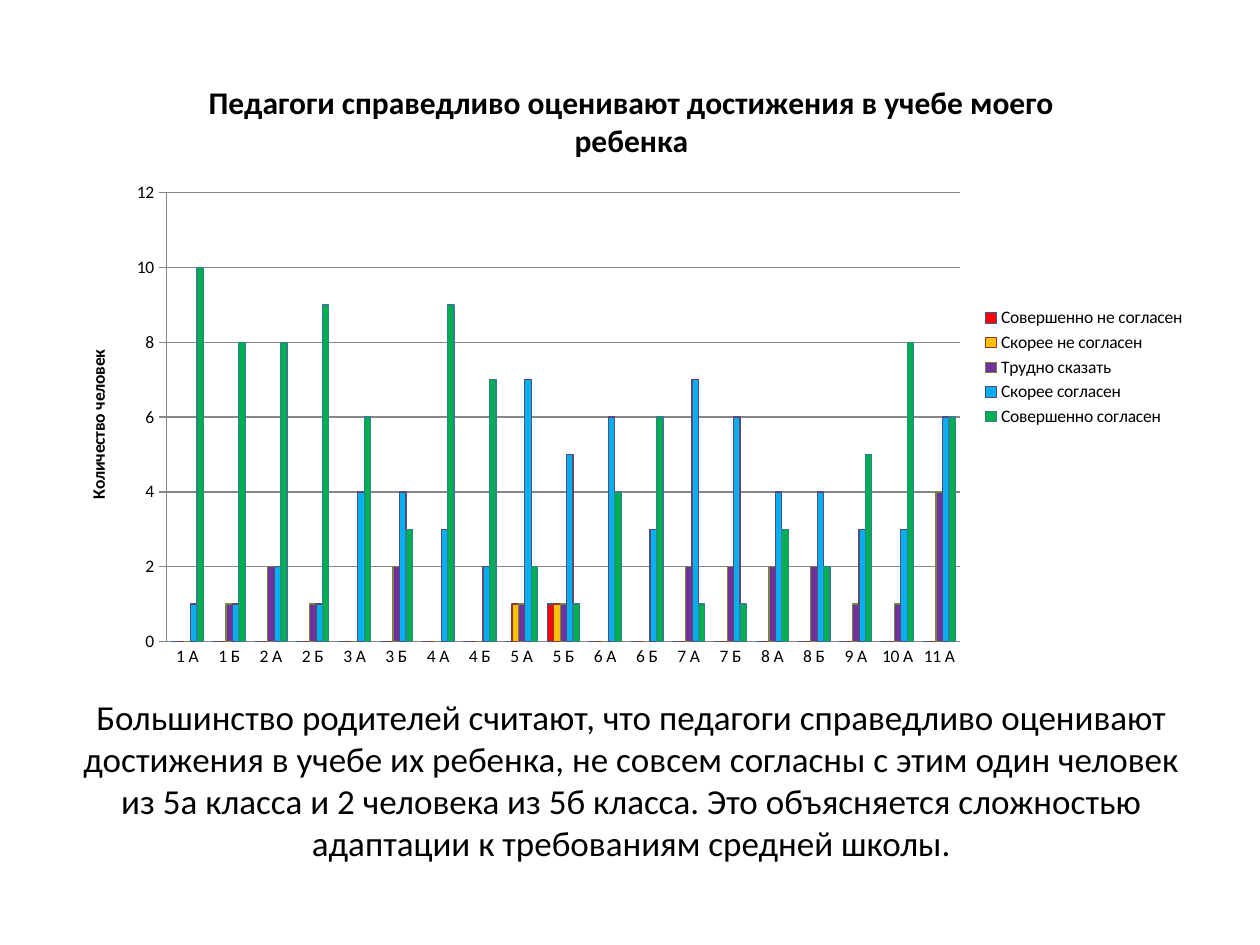
import dataclasses

import pptx
import pptx.chart.data
import pptx.dml.color
import pptx.enum.chart
import pptx.enum.text
import pptx.oxml
import pptx.oxml.ns
import pptx.util

Cm = pptx.util.Cm


@dataclasses.dataclass(frozen=True)
class Theme:
    font: str = "Calibri"
    text: str = "000000"
    grid: str = "868686"
    conclusion_size: int = 20
    title_size: int = 18
    chart_size: int = 10
    # Fill and outline of each answer
    bars: tuple = (
        ("FF0000", "385D8A"),
        ("FFC000", "8C3836"),
        ("7030A0", "71893F"),
        ("00B0F0", "5C4776"),
        ("00B050", "357D91"),
    )


CLASSES = ["1 А", "1 Б", "2 А", "2 Б", "3 А", "3 Б", "4 А", "4 Б", "5 А", "5 Б",
           "6 А", "6 Б", "7 А", "7 Б", "8 А", "8 Б", "9 А", "10 А", "11 А"]
ANSWERS = {
    "Совершенно не согласен": [0, 0, 0, 0, 0, 0, 0, 0, 0, 1, 0, 0, 0, 0, 0, 0, 0, 0, 0],
    "Скорее не согласен": [0, 0, 0, 0, 0, 0, 0, 0, 1, 1, 0, 0, 0, 0, 0, 0, 0, 0, 0],
    "Трудно сказать": [0, 1, 2, 1, 0, 2, 0, 0, 1, 1, 0, 0, 2, 2, 2, 2, 1, 1, 4],
    "Скорее согласен": [1, 1, 2, 1, 4, 4, 3, 2, 7, 5, 6, 3, 7, 6, 4, 4, 3, 3, 6],
    "Совершенно согласен": [10, 8, 8, 9, 6, 3, 9, 7, 2, 1, 4, 6, 1, 1, 3, 2, 5, 8, 6],
}
CHART_TITLE = "Педагоги справедливо оценивают достижения в учебе моего ребенка"
AXIS_TITLE = "Количество человек"
CONCLUSION = (
    "Большинство родителей считают, что педагоги справедливо оценивают достижения "
    "в учебе их ребенка, не совсем согласны с этим один человек из 5а класса и "
    "2 человека из 5б класса. Это объясняется сложностью адаптации к требованиям "
    "средней школы."
)


def apply(target, values):
    for name, value in values.items():
        setattr(target, name, value)


class SlideBuilder:
    def __init__(self, slide, theme):
        self.slide = slide
        self.theme = theme

    def color(self, value):
        return pptx.dml.color.RGBColor.from_string(value)

    def style_font(self, font, size, bold=False):
        apply(font, {"name": self.theme.font, "size": pptx.util.Pt(size), "bold": bold})
        font.color.rgb = self.color(self.theme.text)

    def style_line(self, line, color):
        line.color.rgb = self.color(color)
        line.width = pptx.util.Pt(0.75)

    def add_text(self, text, box, size):
        frame = self.slide.shapes.add_textbox(*box).text_frame
        apply(frame, {"word_wrap": True,
                      "vertical_anchor": pptx.enum.text.MSO_ANCHOR.MIDDLE})
        paragraph = frame.paragraphs[0]
        paragraph.alignment = pptx.enum.text.PP_ALIGN.CENTER
        run = paragraph.add_run()
        run.text = text
        self.style_font(run.font, size)

    def add_title(self, owner, text, size):
        """Give a chart or an axis its bold title."""
        frame = owner.text_frame
        frame.text = text
        self.style_font(frame.paragraphs[0].runs[0].font, size, bold=True)

    def add_column_chart(self, categories, answers, box, plot_area):
        data = pptx.chart.data.CategoryChartData(number_format="0")
        data.categories = categories
        for name, values in answers.items():
            data.add_series(name, values)
        chart = self.slide.shapes.add_chart(
            pptx.enum.chart.XL_CHART_TYPE.COLUMN_CLUSTERED, *box, data).chart
        self.style_font(chart.font, self.theme.chart_size)
        self.add_title(chart.chart_title, CHART_TITLE, self.theme.title_size)
        apply(chart, {"has_legend": True})
        apply(chart.legend, {"position": pptx.enum.chart.XL_LEGEND_POSITION.RIGHT,
                             "include_in_layout": False})

        # Columns
        plot = chart.plots[0]
        apply(plot, {"gap_width": 150, "overlap": 0, "vary_by_categories": False})
        for series, (fill, outline) in zip(plot.series, self.theme.bars):
            series.format.fill.solid()
            series.format.fill.fore_color.rgb = self.color(fill)
            self.style_line(series.format.line, outline)

        # Axes
        tick = pptx.enum.chart.XL_TICK_MARK
        apply(chart.category_axis, {"major_tick_mark": tick.NONE})
        apply(chart.value_axis, {"major_tick_mark": tick.OUTSIDE,
                                 "has_major_gridlines": True, "minimum_scale": 0,
                                 "maximum_scale": 12, "major_unit": 2})
        self.add_title(chart.value_axis.axis_title, AXIS_TITLE, self.theme.chart_size)
        for part in (chart.category_axis, chart.value_axis,
                     chart.value_axis.major_gridlines):
            self.style_line(part.format.line, self.theme.grid)
        self.place_plot(chart, plot_area)

    def place_plot(self, chart, plot_area):
        """Fix the inner plot area as fractions of the chart."""
        sizes = "".join(f'<c:{key} val="{value}"/>' for key, value in plot_area.items())
        layout = pptx.oxml.parse_xml(
            f'<c:layout {pptx.oxml.ns.nsdecls("c")}><c:manualLayout>'
            '<c:layoutTarget val="inner"/><c:xMode val="edge"/><c:yMode val="edge"/>'
            f'{sizes}</c:manualLayout></c:layout>')
        area = chart.plots[0]._element.getparent()
        for existing in area.findall(pptx.oxml.ns.qn("c:layout")):
            area.remove(existing)
        area.insert(0, layout)


def main():
    theme = Theme()
    presentation = pptx.Presentation()
    apply(presentation, {"slide_width": Cm(25.4), "slide_height": Cm(19.05)})
    slide = presentation.slides.add_slide(presentation.slide_layouts[6])
    builder = SlideBuilder(slide, theme)
    left, width = Cm(1.3), Cm(22.86)

    # Conclusion under the chart
    builder.add_text(CONCLUSION, (left, Cm(14.12), width, Cm(3.18)),
                     theme.conclusion_size)

    # Answers by class
    builder.add_column_chart(CLASSES, ANSWERS, (left, Cm(1.12), width, Cm(12.57)),
                             {"x": 0.09, "y": 0.22, "w": 0.7, "h": 0.72})

    presentation.save("out.pptx")


if __name__ == "__main__":
    main()
